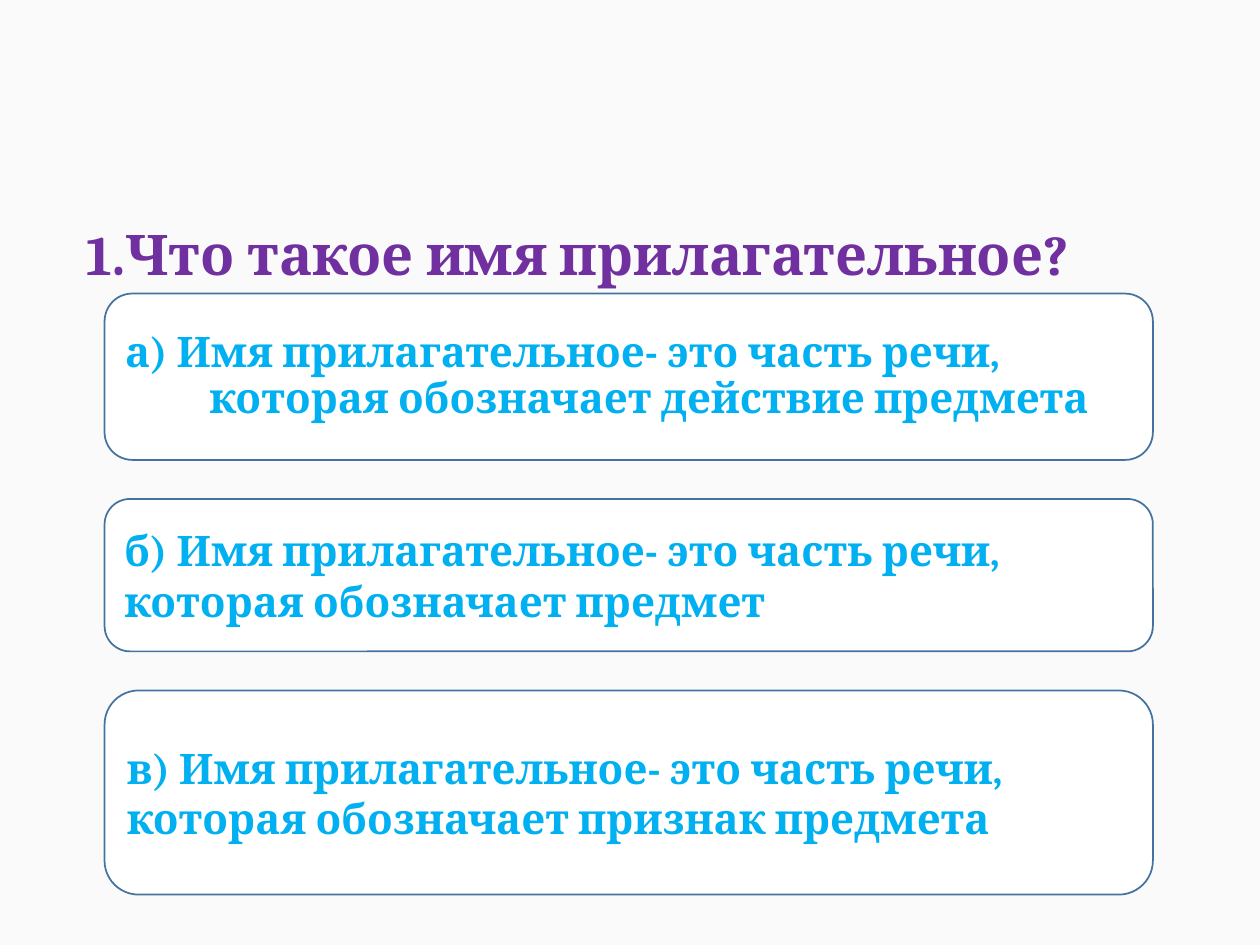
from dataclasses import dataclass

from pptx import Presentation
from pptx.dml.color import RGBColor
from pptx.enum.shapes import MSO_SHAPE as Shape
from pptx.enum.text import MSO_ANCHOR as Anchor, MSO_AUTO_SIZE as AutoSize, PP_ALIGN as Align
from pptx.slide import Slide
from pptx.text.text import TextFrame
from pptx.util import Inches, Pt


@dataclass(frozen=True)
class Theme:
    font: str = "Cambria"
    background: RGBColor = RGBColor(0xFA, 0xFA, 0xFA)
    card: RGBColor = RGBColor(0xFF, 0xFF, 0xFF)
    border: RGBColor = RGBColor(0x43, 0x73, 0x9E)
    question: RGBColor = RGBColor(0x70, 0x30, 0xA0)
    answer: RGBColor = RGBColor(0x00, 0xB0, 0xF0)
    question_size: int = 32
    answer_size: int = 24
    border_width: int = 1


@dataclass(frozen=True)
class Answer:
    letter: str
    meaning: str
    height: float
    hanging: float = 0
    line_spacing: float = 1.0


THEME = Theme()
ANSWER_LEFT, ANSWER_TOP, ANSWER_WIDTH, ANSWER_GAP = 0.83, 2.33, 8.32, 0.31
ANSWERS = [
    Answer("а", "действие предмета", 1.32, hanging=0.67, line_spacing=0.9),
    Answer("б", "предмет", 1.21),
    Answer("в", "признак предмета", 1.62),
]


def write_text(frame: TextFrame, text: str, *, size: int, color: RGBColor,
               anchor: Anchor = Anchor.TOP, hanging: float = 0,
               line_spacing: float = 1.0) -> None:
    frame.word_wrap = True
    frame.vertical_anchor = anchor
    paragraph = frame.paragraphs[0]
    paragraph.alignment = Align.LEFT
    paragraph.line_spacing = line_spacing
    if hanging:
        properties = paragraph._p.get_or_add_pPr()
        properties.set("marL", str(Inches(hanging)))
        properties.set("indent", str(Inches(-hanging)))
    run = paragraph.add_run()
    run.text = text
    run.font.name = THEME.font
    run.font.size = Pt(size)
    run.font.bold = True
    run.font.color.rgb = color


def draw_question(slide: Slide, text: str) -> None:
    question = slide.shapes.add_textbox(Inches(0.59), Inches(1.69), Inches(8.91), Inches(0.64))
    write_text(question.text_frame, text, size=THEME.question_size, color=THEME.question)
    question.text_frame.auto_size = AutoSize.SHAPE_TO_FIT_TEXT


def draw_answer(slide: Slide, answer: Answer, top: float) -> None:
    card = slide.shapes.add_shape(
        Shape.ROUNDED_RECTANGLE, Inches(ANSWER_LEFT), Inches(top),
        Inches(ANSWER_WIDTH), Inches(answer.height))
    card.shadow.inherit = False
    card.fill.solid()
    card.fill.fore_color.rgb = THEME.card
    card.line.color.rgb = THEME.border
    card.line.width = Pt(THEME.border_width)
    write_text(
        card.text_frame,
        f"{answer.letter}) Имя прилагательное- это часть речи, которая обозначает {answer.meaning}",
        size=THEME.answer_size, color=THEME.answer, anchor=Anchor.MIDDLE,
        hanging=answer.hanging, line_spacing=answer.line_spacing)


def main() -> None:
    deck = Presentation()
    deck.slide_width, deck.slide_height = Inches(10), Inches(7.5)
    slide = deck.slides.add_slide(deck.slide_layouts[6])
    slide.background.fill.solid()
    slide.background.fill.fore_color.rgb = THEME.background

    draw_question(slide, "1.Что такое имя прилагательное?")
    top = ANSWER_TOP
    for answer in ANSWERS:
        draw_answer(slide, answer, top)
        top += answer.height + ANSWER_GAP
    deck.save("out.pptx")


if __name__ == "__main__":
    main()
